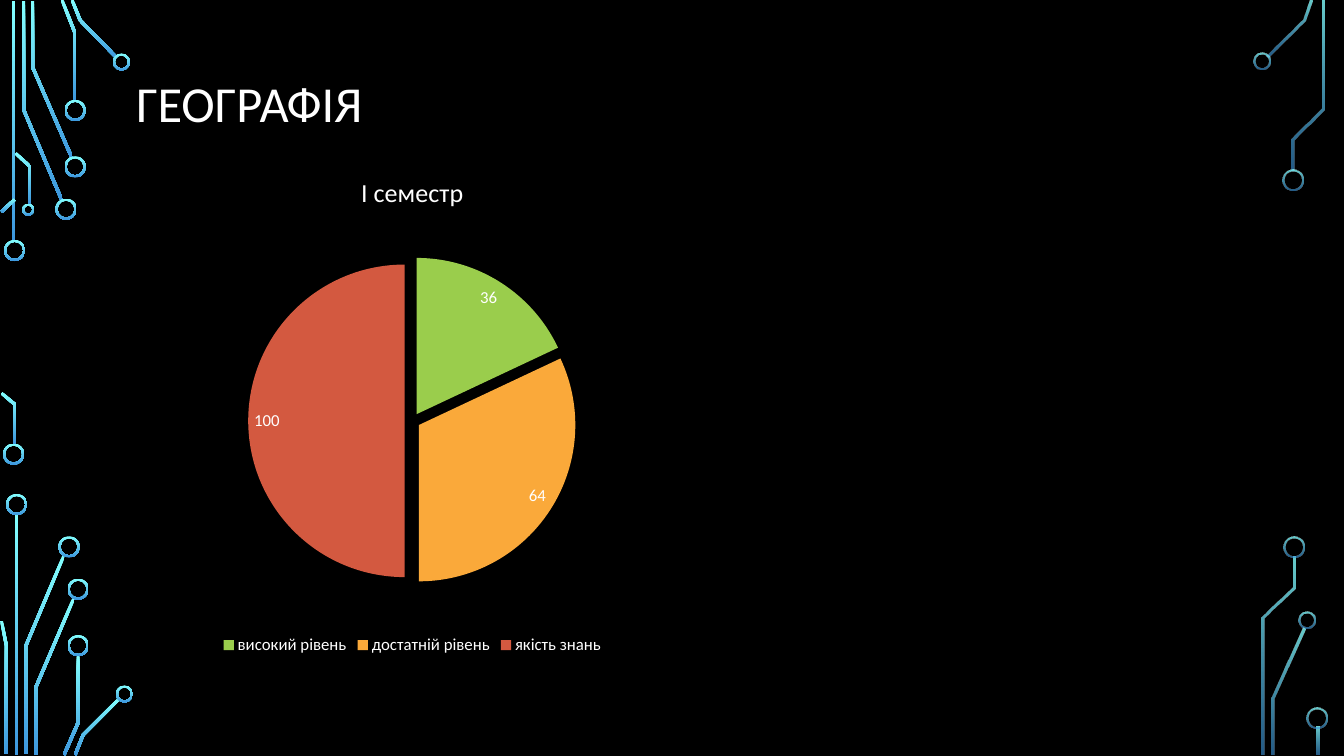
import math

import pptx
import pptx.chart.data
import pptx.dml.color
import pptx.enum.chart
import pptx.enum.shapes
import pptx.enum.text
import pptx.oxml
import pptx.oxml.ns
import pptx.util

Inches = pptx.util.Inches

TITLE = "ГЕОГРАФІЯ"
CHART = {
    "title": "І семестр",
    "levels": [("високий рівень", 36), ("достатній рівень", 64), ("якість знань", 100)],
}

# Each trace lists its left edge; each ring is left, top, diameter.
CIRCUITS = [
    {
        "alphas": (100, 100),
        "traces": [
            [(0.12, 0.01), (0.12, 2.4)],
            [(0.22, 0.01), (0.22, 1.09), (0.6, 1.99)],
            [(0.31, 0.01), (0.31, 0.67), (0.7, 1.57)],
            [(0.6, 0), (0.73, 0.33), (0.73, 1)],
            [(0.7, 0), (0.78, 0.2), (1.14, 0.57)],
            [(0.13, 1.98), (0, 2.1)],
            [(0, 3.9), (0.13, 4.01), (0.13, 4.41)],
            [(0.14, 1.52), (0.28, 1.65), (0.28, 2.03)],
            [(0.15, 5.1), (0.15, 7.49)],
            [(0.24, 7.48), (0.24, 6.41), (0.62, 5.51)],
            [(0.05, 7.48), (0.05, 6.41), (0, 6.16)],
            [(0.34, 7.49), (0.34, 6.82), (0.72, 5.93)],
            [(0.62, 7.49), (0.76, 7.17), (0.76, 6.5)],
            [(0.73, 7.49), (0.81, 7.29), (1.17, 6.93)],
        ],
        "rings": [
            (0.04, 2.38, 0.21), (0.03, 4.4, 0.21), (0.55, 1.97, 0.21),
            (0.64, 1.55, 0.21), (0.64, 0.99, 0.21), (1.12, 0.53, 0.17),
            (0.22, 2.02, 0.12), (0.06, 4.9, 0.21), (0.58, 5.32, 0.21),
            (0.67, 5.74, 0.21), (0.67, 6.3, 0.21), (1.15, 6.8, 0.17),
        ],
    },
    {
        "alphas": (80, 60),
        "traces": [
            [(12.99, 0), (12.92, 0.2), (12.56, 0.56)],
            [(13.11, 0.01), (13.11, 1.08), (12.81, 1.38), (12.81, 1.69)],
            [(12.61, 7.49), (12.61, 6.93), (12.92, 6.23)],
            [(12.51, 7.49), (12.51, 6.13), (12.82, 5.83), (12.82, 5.52)],
            [(13.06, 7.21), (13.06, 7.49)],
        ],
        "rings": [
            (12.43, 0.52, 0.17), (12.72, 1.68, 0.21), (12.88, 6.07, 0.17),
            (12.73, 5.32, 0.21), (12.96, 7.02, 0.21),
        ],
    },
]
TRACE_WIDTH = 0.03
RING_WIDTH = 0.02

THEME = {
    "font": "Calibri", "background": "000000", "text": "FFFFFF",
    "glow": ("82FFFF", "3D97DE"),
    "slices": ("9ACD4C", "FAA93A", "D35940"),
    "title": 36, "chart_title": 18.6, "label": 12, "chart": 10,
}
SERIES_EXPLOSION = 21
SLICE_EXPLOSION = 5


def rgb(value):
    return pptx.dml.color.RGBColor.from_string(value)


def style_font(font, size):
    font.name = THEME["font"]
    font.size = pptx.util.Pt(size)
    font.bold = False
    font.color.rgb = rgb(THEME["text"])


def write(tf, text, size, align=None, spacing=None):
    p = tf.paragraphs[0]
    p.alignment = align
    p.line_spacing = spacing
    r = p.add_run()
    r.text = text
    style_font(r.font, size)


def glow(sp, alphas):
    """Fill with the vertical circuit gradient, without outline or shadow."""
    sp.shadow.inherit = False
    sp.line.fill.background()
    sp.fill.gradient()
    sp.fill.gradient_angle = 270
    for stop, color in zip(sp.fill.gradient_stops, THEME["glow"]):
        stop.color.rgb = rgb(color)
    colors = sp._element.spPr.iter(pptx.oxml.ns.qn("a:srgbClr"))
    for color, alpha in zip(colors, alphas):
        if alpha < 100:
            color.append(pptx.oxml.parse_xml(
                f'<a:alpha {pptx.oxml.ns.nsdecls("a")} val="{alpha * 1000}"/>'))


def ribbon(points):
    """Outline a polyline at constant width, with mitred bends."""
    half = TRACE_WIDTH / 2
    angles = [math.atan2(y2 - y1, x2 - x1)
              for (x1, y1), (x2, y2) in zip(points, points[1:])]
    left, right = [], []
    for (x, y), a, b in zip(points, angles[:1] + angles, angles + angles[-1:]):
        reach = half / math.cos((b - a) / 2)
        dx = -math.sin((a + b) / 2) * reach
        dy = math.cos((a + b) / 2) * reach
        left.append((x + half + dx, y + dy))
        right.append((x + half - dx, y - dy))
    return [(Inches(x), Inches(y)) for x, y in left + right[::-1]]


def add_circuit(s, circuit):
    shapes = s.shapes.add_group_shape().shapes
    for points in circuit["traces"]:
        start, *rest = ribbon(points)
        builder = shapes.build_freeform(*start)
        builder.add_line_segments(rest, close=True)
        glow(builder.convert_to_shape(), circuit["alphas"])
    for left, top, size in circuit["rings"]:
        ring = shapes.add_shape(pptx.enum.shapes.MSO_SHAPE.DONUT,
                                Inches(left), Inches(top), Inches(size), Inches(size))
        ring.adjustments[0] = RING_WIDTH / size
        glow(ring, circuit["alphas"])


def explosion(value):
    return pptx.oxml.parse_xml(
        f'<c:explosion {pptx.oxml.ns.nsdecls("c")} val="{value}"/>')


def add_pie(s):
    data = pptx.chart.data.CategoryChartData()
    names, values = zip(*CHART["levels"])
    data.categories = names
    data.add_series(CHART["title"], values)
    chart = s.shapes.add_chart(pptx.enum.chart.XL_CHART_TYPE.PIE, Inches(0.52),
                               Inches(1.53), Inches(7.14), Inches(5.01), data).chart
    style_font(chart.font, THEME["chart"])
    write(chart.chart_title.text_frame, CHART["title"], THEME["chart_title"])
    chart.has_legend = True
    chart.legend.position = pptx.enum.chart.XL_LEGEND_POSITION.BOTTOM
    chart.legend.include_in_layout = False
    style_font(chart.legend.font, THEME["label"])

    plot = chart.plots[0]
    plot.vary_by_categories = True
    series = plot.series[0]
    labels = series.data_labels
    labels.show_value = True
    labels.position = pptx.enum.chart.XL_LABEL_POSITION.INSIDE_END
    style_font(labels.font, THEME["label"])
    for i, color in enumerate(THEME["slices"]):
        fmt = series.points[i].format
        fmt.fill.solid()
        fmt.fill.fore_color.rgb = rgb(color)
        fmt.line.fill.background()
    slices = series._element.findall(pptx.oxml.ns.qn("c:dPt"))
    for point in slices:
        point.find(pptx.oxml.ns.qn("c:spPr")).addprevious(explosion(SLICE_EXPLOSION))
    slices[0].addprevious(explosion(SERIES_EXPLOSION))


def main():
    prs = pptx.Presentation()
    prs.slide_width, prs.slide_height = Inches(13.33), Inches(7.5)
    s = prs.slides.add_slide(prs.slide_layouts[5])
    s.background.fill.solid()
    s.background.fill.fore_color.rgb = rgb(THEME["background"])
    for circuit in CIRCUITS:
        add_circuit(s, circuit)

    title = s.shapes.title
    title.left, title.top = Inches(1.25), Inches(0.24)
    title.width, title.height = Inches(10.83), Inches(1.62)
    title.text_frame.vertical_anchor = pptx.enum.text.MSO_ANCHOR.MIDDLE
    write(title.text_frame, TITLE, THEME["title"],
          align=pptx.enum.text.PP_ALIGN.LEFT, spacing=0.9)
    add_pie(s)
    prs.save("out.pptx")


if __name__ == "__main__":
    main()
